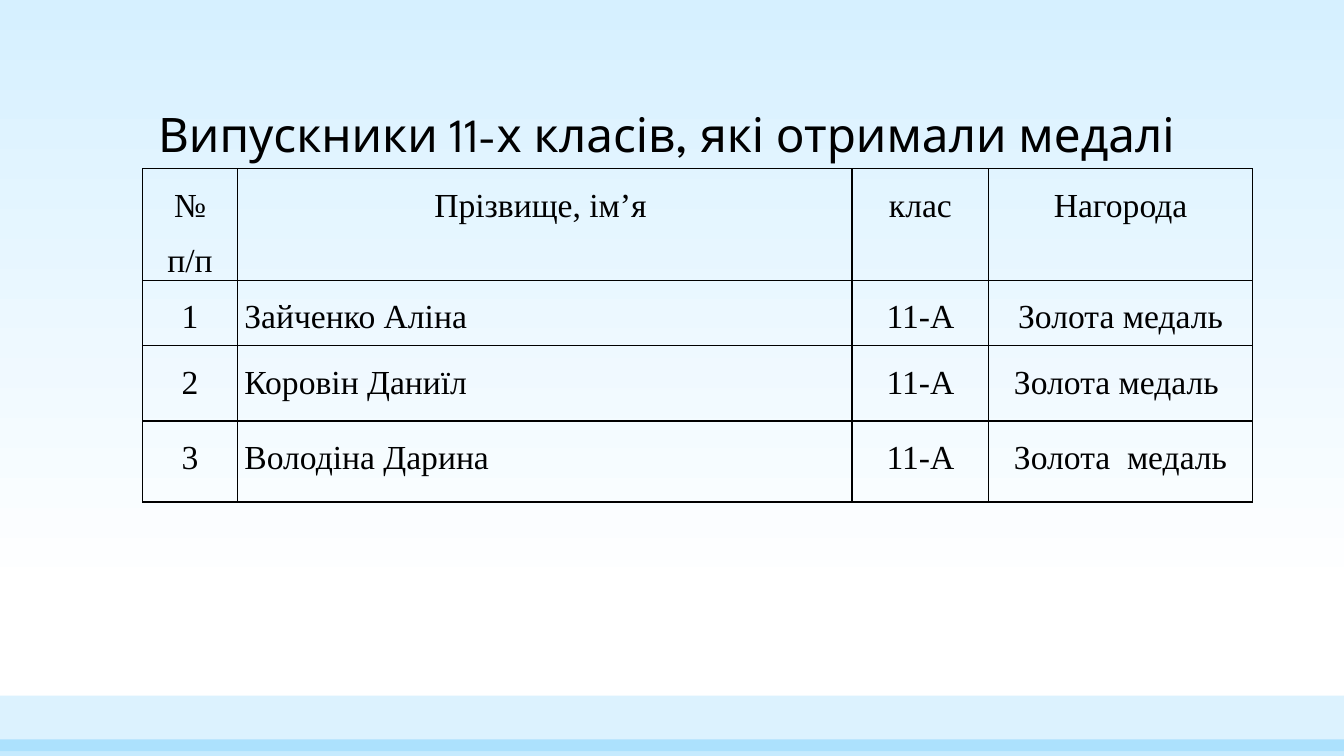
from collections import namedtuple
from dataclasses import dataclass

from lxml.etree import SubElement
from pptx import Presentation
from pptx.dml.color import RGBColor
from pptx.enum.shapes import MSO_SHAPE
from pptx.enum.text import MSO_ANCHOR, PP_ALIGN
from pptx.oxml.ns import qn
from pptx.util import Cm, Pt

Box = namedtuple("Box", "left top width height")


@dataclass(frozen=True)
class Theme:
    ink: str = "000000"
    sky: str = "D6F0FF"
    paper: str = "FFFFFF"
    band: str = "31B6FD"
    title_font: str = "League Spartan"
    table_font: str = "Times New Roman"
    title_size: int = 34
    table_size: int = 24
    border: int = 1


THEME = Theme()
PAGE = Box(0, 0, 33.87, 19.05)
COLUMN_WIDTHS = (2.38, 15.49, 3.45, 6.64)
ROW_HEIGHTS = (2.66, 1.65, 1.9, 2.04)
HEADINGS = ("№ п/п", "Прізвище, ім’я ", "клас", "Нагорода")
GRADUATES = (
    ("1", "Зайченко Аліна", "11-А", "Золота медаль"),
    ("2", "Коровін Даниїл", "11-А", "Золота медаль "),
    ("3", "Володіна Дарина", "11-А", "Золота  медаль"),
)
NAME_COLUMN = 1


def add_span(para, text, font, size):
    span = para.add_run()
    span.text = text
    span.font.name = font
    span.font.size = Pt(size)
    span.font.color.rgb = RGBColor.from_string(THEME.ink)


def paint_background(page):
    fill = page.background.fill
    fill.gradient()
    fill.gradient_angle = 270
    stops = ((0, THEME.sky), (0.79, THEME.paper))
    for stop, (position, color) in zip(fill.gradient_stops, stops):
        stop.position = position
        stop.color.rgb = RGBColor.from_string(color)


def add_footer_bands(page, box):
    # Each band: offset from the box top, height, opacity in percent
    for offset, height, opacity in ((0, 1.4, 17), (1.1, 0.43, 28)):
        band = page.shapes.add_shape(
            MSO_SHAPE.RECTANGLE, Cm(box.left), Cm(box.top + offset), Cm(box.width), Cm(height))
        band.shadow.inherit = False
        band.line.fill.background()
        band.fill.solid()
        band.fill.fore_color.rgb = RGBColor.from_string(THEME.band)
        color = band.fill._xPr.find(".//" + qn("a:srgbClr"))
        SubElement(color, qn("a:alpha"), val=str(opacity * 1000))


def add_title(page, box, text):
    title = page.shapes.title
    title.left, title.top, title.width, title.height = map(Cm, box)
    frame = title.text_frame
    frame.word_wrap = True
    frame.vertical_anchor = MSO_ANCHOR.BOTTOM
    para = frame.paragraphs[0]
    para.alignment = PP_ALIGN.LEFT
    para.line_spacing = 0.9
    add_span(para, text, THEME.title_font, THEME.title_size)


def add_borders(cell):
    properties = cell._tc.get_or_add_tcPr()
    for side in ("lnL", "lnR", "lnT", "lnB"):
        line = SubElement(properties, qn(f"a:{side}"), w=str(Pt(THEME.border)))
        SubElement(SubElement(line, qn("a:solidFill")), qn("a:srgbClr"), val=THEME.ink)


def fill_cell(cell, text, alignment):
    add_borders(cell)
    cell.fill.background()
    cell.margin_left = cell.margin_right = Cm(0.18)
    cell.margin_top = cell.margin_bottom = 0
    cell.vertical_anchor = MSO_ANCHOR.TOP
    para = cell.text_frame.paragraphs[0]
    para.alignment = alignment
    para.line_spacing = 1.5
    add_span(para, text, THEME.table_font, THEME.table_size)


def add_medal_table(page, box):
    rows = (HEADINGS, *GRADUATES)
    table = page.shapes.add_table(len(rows), len(HEADINGS), *map(Cm, box)).table
    table.first_row = table.horz_banding = False
    for column, width in zip(table.columns, COLUMN_WIDTHS):
        column.width = Cm(width)
    for row, height in zip(table.rows, ROW_HEIGHTS):
        row.height = Cm(height)
    for r, texts in enumerate(rows):
        for c, text in enumerate(texts):
            is_name = r > 0 and c == NAME_COLUMN
            fill_cell(table.cell(r, c), text, PP_ALIGN.LEFT if is_name else PP_ALIGN.CENTER)


def build_medal_page(deck):
    title_only = deck.slide_layouts[5]
    page = deck.slides.add_slide(title_only)
    paint_background(page)
    add_footer_bands(page, Box(0, 17.53, PAGE.width, 1.52))
    add_title(page, Box(3.73, 1.22, 26.42, 3.02), "Випускники 11-х класів, які отримали медалі")
    add_medal_table(page, Box(3.6, 4.25, sum(COLUMN_WIDTHS), sum(ROW_HEIGHTS)))


def main():
    deck = Presentation()
    deck.slide_width, deck.slide_height = Cm(PAGE.width), Cm(PAGE.height)
    build_medal_page(deck)
    deck.save("out.pptx")


if __name__ == "__main__":
    main()
